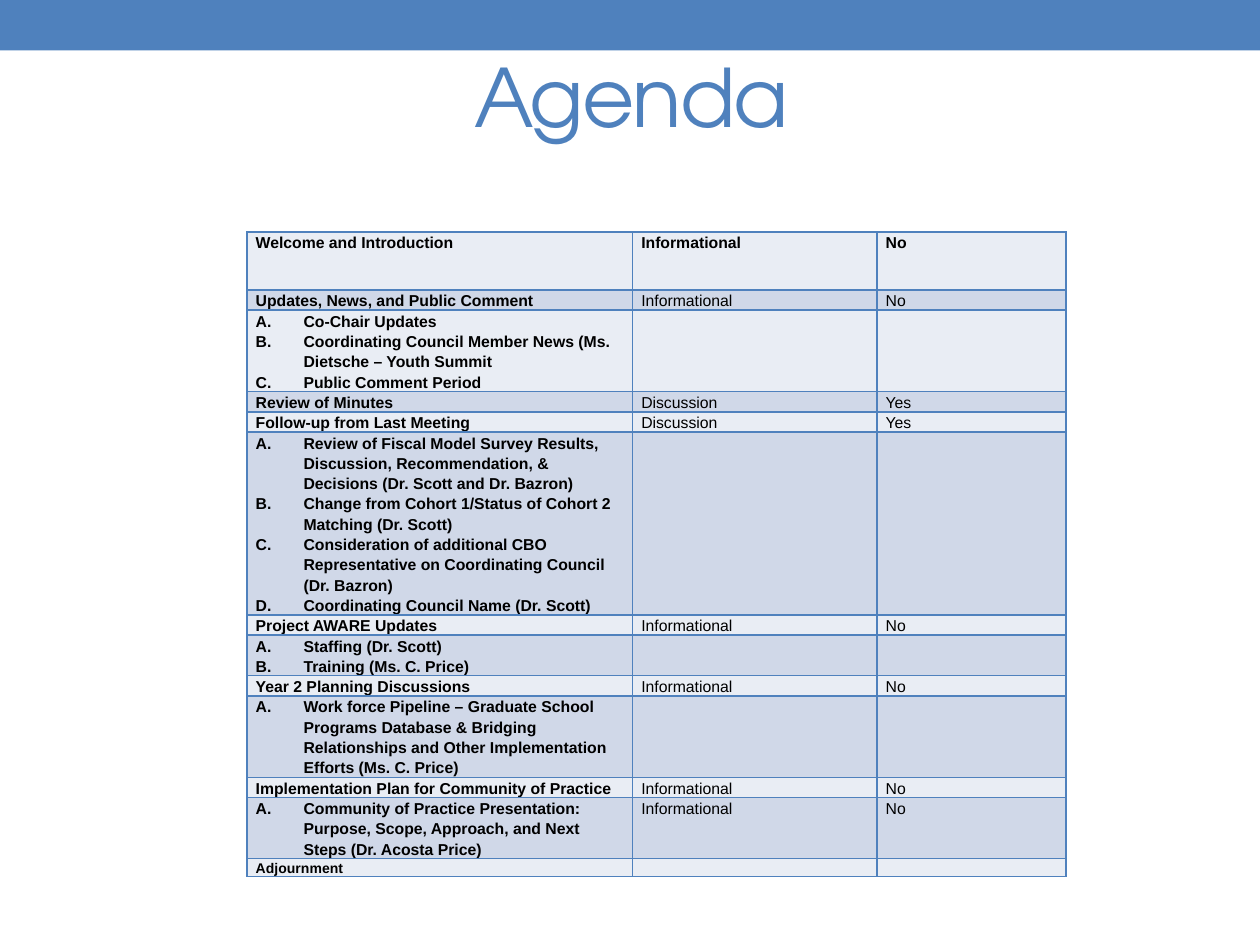
from dataclasses import dataclass

from lxml.etree import SubElement
from pptx import Presentation
from pptx.dml.color import RGBColor
from pptx.enum.shapes import MSO_SHAPE as Shape
from pptx.enum.text import MSO_ANCHOR as Anchor, PP_ALIGN as Align
from pptx.oxml.ns import qn
from pptx.util import Inches, Pt

BLUE = RGBColor(0x4F, 0x81, 0xBD)
BLACK = RGBColor(0, 0, 0)
BANDS = RGBColor(0xE9, 0xED, 0xF4), RGBColor(0xD0, 0xD8, 0xE8)
WIDTH, HEIGHT = Inches(10), Inches(7.5)
LINE = Inches(0.16)
COLUMNS = Inches(3.06), Inches(1.94), Inches(1.5)
INDENT = Inches(0.38)
BODY_SIZE = 9


@dataclass
class AgendaRow:
    """One row: a heading or lettered topics, with the kind of item and the vote."""
    topics: tuple[str, ...]
    kind: str = ""
    vote: str = ""
    lines: float = 1
    lettered: bool = False
    bold: bool = False
    size: float = BODY_SIZE


def heading(text: str, kind: str = "", vote: str = "", **options) -> AgendaRow:
    return AgendaRow((text,), kind, vote, **options)


def letters(*topics: str, **options) -> AgendaRow:
    return AgendaRow(topics, lettered=True, **options)


AGENDA = (
    heading("Welcome and Introduction", "Informational", "No", lines=2.88, bold=True),
    heading("Updates, News, and Public Comment", "Informational", "No"),
    letters("Co-Chair Updates",
            "Coordinating Council Member News (Ms. Dietsche – Youth Summit",
            "Public Comment Period", lines=4),
    heading("Review of Minutes", "Discussion", "Yes"),
    heading("Follow-up from Last Meeting", "Discussion", "Yes"),
    letters("Review of Fiscal Model Survey Results, Discussion, Recommendation, "
            "& Decisions (Dr. Scott and Dr. Bazron)",
            "Change from Cohort 1/Status of Cohort 2 Matching (Dr. Scott)",
            "Consideration of additional CBO Representative on Coordinating "
            "Council (Dr. Bazron)",
            "Coordinating Council Name (Dr. Scott)", lines=9),
    heading("Project AWARE Updates", "Informational", "No"),
    letters("Staffing (Dr. Scott)", "Training (Ms. C. Price)", lines=2),
    heading("Year 2 Planning Discussions", "Informational", "No"),
    letters("Work force Pipeline – Graduate School Programs Database & Bridging "
            "Relationships and Other Implementation Efforts (Ms. C. Price)", lines=4),
    heading("Implementation Plan for Community of Practice", "Informational", "No"),
    letters("Community of Practice Presentation: Purpose, Scope, Approach, and "
            "Next Steps (Dr. Acosta Price)", kind="Informational", vote="No", lines=3),
    heading("Adjournment", lines=0.88, size=8),
)


def write(para, text: str, *, size: float = BODY_SIZE, font: str = "Arial",
          color: RGBColor = BLACK, bold: bool = False):
    span = para.add_run()
    span.text = text
    span.font.name, span.font.size, span.font.bold = font, Pt(size), bold
    span.font.color.rgb = color
    return span


def add_letter(para) -> None:
    """Number the paragraph A., B., C. with a hanging indent."""
    props = para._p.get_or_add_pPr()
    props.set("marL", str(INDENT))
    props.set("indent", str(-INDENT))
    SubElement(props, qn("a:buFont"), typeface="+mj-lt")
    SubElement(props, qn("a:buAutoNum"), type="alphaUcPeriod")


def add_borders(cell) -> None:
    props = cell._tc.get_or_add_tcPr()
    for place, side in enumerate(("lnL", "lnR", "lnT", "lnB")):
        line = SubElement(props, qn(f"a:{side}"), w=str(Pt(1)))
        fill = SubElement(line, qn("a:solidFill"))
        SubElement(fill, qn("a:srgbClr"), val=str(BLUE))
        props.insert(place, line)


def fill_cell(cell, texts: tuple[str, ...], band: RGBColor, *, lettered: bool = False,
              bold: bool = False, size: float = BODY_SIZE) -> None:
    cell.fill.solid()
    cell.fill.fore_color.rgb = band
    cell.margin_left = cell.margin_right = Inches(0.07)
    cell.margin_top = cell.margin_bottom = 0
    add_borders(cell)
    frame = cell.text_frame
    for index, text in enumerate(texts):
        para = frame.add_paragraph() if index else frame.paragraphs[0]
        para.line_spacing = 1.15
        if lettered:
            add_letter(para)
        if text:
            write(para, text, size=size, bold=bold)
        else:
            SubElement(para._p, qn("a:endParaRPr"), sz=str(size * 100))


def add_agenda(page) -> None:
    table = page.shapes.add_table(
        len(AGENDA), len(COLUMNS), Inches(1.96), Inches(1.84), sum(COLUMNS),
        int(LINE * sum(row.lines for row in AGENDA))).table
    table.first_row = table.horz_banding = False
    for column, width in zip(table.columns, COLUMNS):
        column.width = width
    for index, row in enumerate(AGENDA):
        table.rows[index].height = int(LINE * row.lines)
        band = BANDS[index % 2]
        fill_cell(table.cell(index, 0), row.topics, band,
                  lettered=row.lettered, bold=True, size=row.size)
        for column, text in enumerate((row.kind, row.vote), start=1):
            fill_cell(table.cell(index, column), (text,), band,
                      bold=row.bold, size=row.size)


def add_band(page) -> None:
    band = page.shapes.add_shape(Shape.RECTANGLE, 0, 0, WIDTH, Inches(0.4))
    band.shadow.inherit = False
    band.fill.solid()
    band.fill.fore_color.rgb = BLUE
    band.line.fill.background()


def add_title(page, text: str) -> None:
    title = page.shapes.title
    title.left, title.top = Inches(0.51), Inches(0.42)
    title.width, title.height = Inches(9), Inches(0.67)
    frame = title.text_frame
    frame.vertical_anchor = Anchor.MIDDLE
    para = frame.paragraphs[0]
    para.alignment = Align.CENTER
    span = write(para, text, size=46, font="TeX Gyre Adventor", color=BLUE)
    span.font._element.set("spc", "-100")


def main() -> None:
    deck = Presentation()
    deck.slide_width, deck.slide_height = WIDTH, HEIGHT
    page = deck.slides.add_slide(deck.slide_layouts.get_by_name("Title Only"))
    add_band(page)
    add_title(page, "Agenda")
    add_agenda(page)
    deck.save("out.pptx")


if __name__ == "__main__":
    main()
